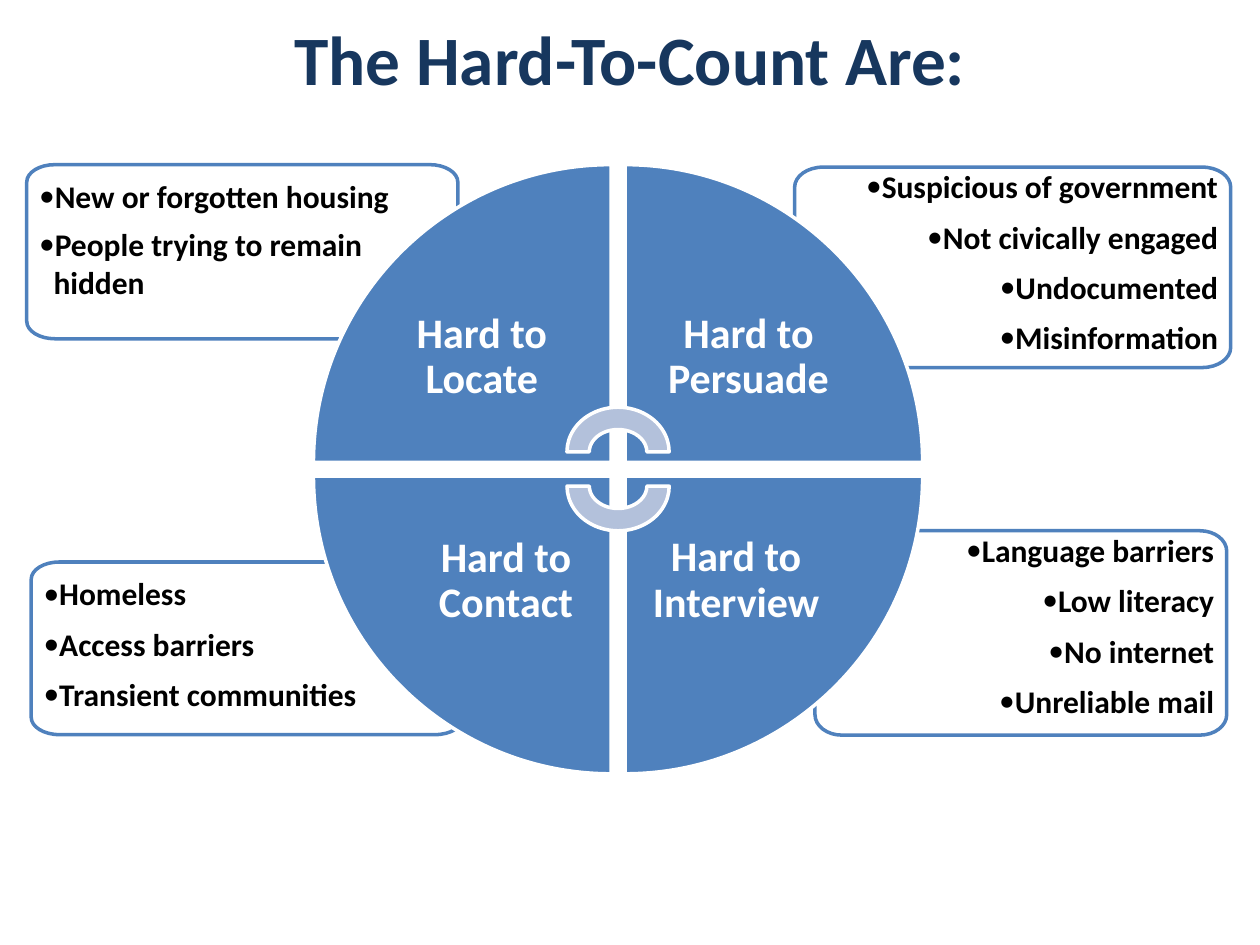
import pptx
import pptx.dml.color
import pptx.enum.shapes
import pptx.enum.text
import pptx.util
from lxml import etree
from pptx.oxml.ns import qn
from pptx.util import Cm

BLUE, WHITE, NAVY, PALE, BLACK = "4F81BD", "FFFFFF", "17375E", "B3C1DB", "000000"
LEFT, CENTER, RIGHT = (pptx.enum.text.PP_ALIGN.LEFT, pptx.enum.text.PP_ALIGN.CENTER,
                       pptx.enum.text.PP_ALIGN.RIGHT)
TOP, MIDDLE = pptx.enum.text.MSO_ANCHOR.TOP, pptx.enum.text.MSO_ANCHOR.MIDDLE

HUB_X, HUB_Y, RADIUS, HALF_GAP = 12.46, 9.46, 6, 0.14
CURVE = 0.55  # Bezier handle length of a quarter ellipse

# label, column side, row side, text insets
QUADRANTS = [
    ("Hard to Locate", -1, -1, (1.27, 2.24, 0.48, 0.48)),
    ("Hard to Persuade", 1, -1, (0.25, 2.24, 1.27, 0.48)),
    ("Hard to Interview", 1, 1, (0.51, 0.25, 2.03, 2.03)),
    ("Hard to Contact", -1, 1, (2.24, 0.48, 0.48, 2.24)),
]

# box, alignment, text insets, space after each item, items, unbulleted last line
GROUPS = [
    ((16.43, 10.7, 8.3, 4.12), RIGHT, (0, 0, 0.25, 0), 7.2,
     ["Language barriers", "Low literacy", "No internet", "Unreliable mail"], None),
    ((0.63, 11.33, 8.71, 3.48), LEFT, (0.25, 0.25, 0, 0), 7.2,
     ["Homeless", "Access barriers", "Transient communities"], None),
    ((0.54, 3.32, 8.69, 3.51), LEFT, (0.25, 0.25, 0, 0), 6,
     ["New or forgotten housing", "People trying to remain"], "hidden"),
    ((16.02, 3.37, 8.79, 4.04), RIGHT, (0, 0, 0.25, 0), 7.2,
     ["Suspicious of government", "Not civically engaged", "Undocumented",
      "Misinformation"], None),
]


def color(value):
    return pptx.dml.color.RGBColor.from_string(value)


def paint(s, fill, line):
    s.shadow.inherit = False
    s.fill.solid()
    s.fill.fore_color.rgb = color(fill)
    s.line.color.rgb = color(line)
    s.line.width = pptx.util.Pt(2)


def set_indent(p, left, first=0.0):
    pPr = p._p.get_or_add_pPr()
    pPr.set("marL", str(Cm(left)))
    pPr.set("indent", str(Cm(first)))
    return pPr


def add_bullet(p):
    pPr = set_indent(p, 0.25, -0.25)
    etree.SubElement(pPr, qn("a:buFont")).set("typeface", "Calibri")
    etree.SubElement(pPr, qn("a:buChar")).set("char", "•")


def add_run(p, text, size, ink):
    r = p.add_run()
    r.text = text
    r.font.name = "Calibri"
    r.font.size = pptx.util.Pt(size)
    r.font.bold = True
    r.font.color.rgb = color(ink)


def write(s, lines, size, ink, align=CENTER, anchor=MIDDLE, insets=(0, 0, 0, 0),
          bullets=False, spacing=1.0, after=0, last_line=None):
    tf = s.text_frame
    tf.word_wrap = True
    tf.vertical_anchor = anchor
    tf.margin_left, tf.margin_top, tf.margin_right, tf.margin_bottom = map(Cm, insets)
    for i, line in enumerate(lines):
        p = tf.add_paragraph() if i else tf.paragraphs[0]
        if bullets:
            add_bullet(p)
        p.alignment = align
        p.line_spacing = spacing
        p.space_after = pptx.util.Pt(after if i < len(lines) - 1 else 0)
        add_run(p, line, size, ink)
    if last_line:
        p = tf.add_paragraph()
        set_indent(p, 0.29)
        p.alignment = align
        add_run(p, last_line, size, ink)


def add_outline(shapes, start, segments):
    """Closed outline; a segment is an end point and the corner it rounds, or None."""
    builder = shapes.build_freeform(Cm(start[0]), Cm(start[1]))
    builder.add_line_segments([(Cm(x), Cm(y)) for (x, y), _ in segments], close=True)
    s = builder.convert_to_shape()
    ends = [start] + [end for end, _ in segments]
    lines = list(s._element.iter(qn("a:lnTo")))
    for line, before, (end, corner) in zip(lines, ends, segments):
        if corner is None:
            continue
        curve = etree.Element(qn("a:cubicBezTo"))
        for anchor in (before, end):
            x, y = (a + CURVE * (c - a) for a, c in zip(anchor, corner))
            pt = etree.SubElement(curve, qn("a:pt"))
            pt.set("x", str(Cm(x) - s.left))
            pt.set("y", str(Cm(y) - s.top))
        curve.append(line[0])
        line.getparent().replace(line, curve)
    return s


def add_group_box(shapes, box, align, insets, after, items, last_line):
    x, y, w, h = box
    rx, ry = 0.065 * w, 0.1 * h
    r, b = x + w, y + h
    s = add_outline(shapes, (x, y + ry), [
        ((x + rx, y), (x, y)), ((r - rx, y), None),
        ((r, y + ry), (r, y)), ((r, b - ry), None),
        ((r - rx, b), (r, b)), ((x + rx, b), None),
        ((x, b - ry), (x, b)), ((x, y + ry), None)])
    paint(s, WHITE, BLUE)
    write(s, items, 18, BLACK, align=align, anchor=TOP, insets=insets,
          bullets=True, after=after, last_line=last_line)


def add_quadrant(shapes, label, column, row, insets):
    x, y = HUB_X + column * HALF_GAP, HUB_Y + row * HALF_GAP
    far_x, far_y = x + column * RADIUS, y + row * RADIUS
    s = add_outline(shapes, (far_x, y), [
        ((x, far_y), (far_x, far_y)), ((x, y), None), ((far_x, y), None)])
    paint(s, BLUE, WHITE)
    write(s, [label], 24, WHITE, insets=insets, spacing=0.9)


def add_hub_arc(shapes, top, rotation):
    w, h = 2.06, 1.8
    s = shapes.add_shape(pptx.enum.shapes.MSO_SHAPE.BLOCK_ARC,
                         Cm(HUB_X - w / 2), Cm(top), Cm(w), Cm(h))
    s.rotation = rotation
    paint(s, PALE, WHITE)


def main():
    prs = pptx.Presentation()
    prs.slide_width, prs.slide_height = Cm(25.4), Cm(19.05)
    shapes = prs.slides.add_slide(prs.slide_layouts[6]).shapes

    title = shapes.add_textbox(Cm(1.27), Cm(0.22), Cm(22.86), Cm(1.9))
    write(title, ["The Hard-To-Count Are:"], 39.6, NAVY)
    for group in GROUPS:
        add_group_box(shapes, *group)
    for quadrant in QUADRANTS:
        add_quadrant(shapes, *quadrant)
    add_hub_arc(shapes, 8.21, 0)
    add_hub_arc(shapes, 8.9, 180)

    prs.save("out.pptx")


if __name__ == "__main__":
    main()
